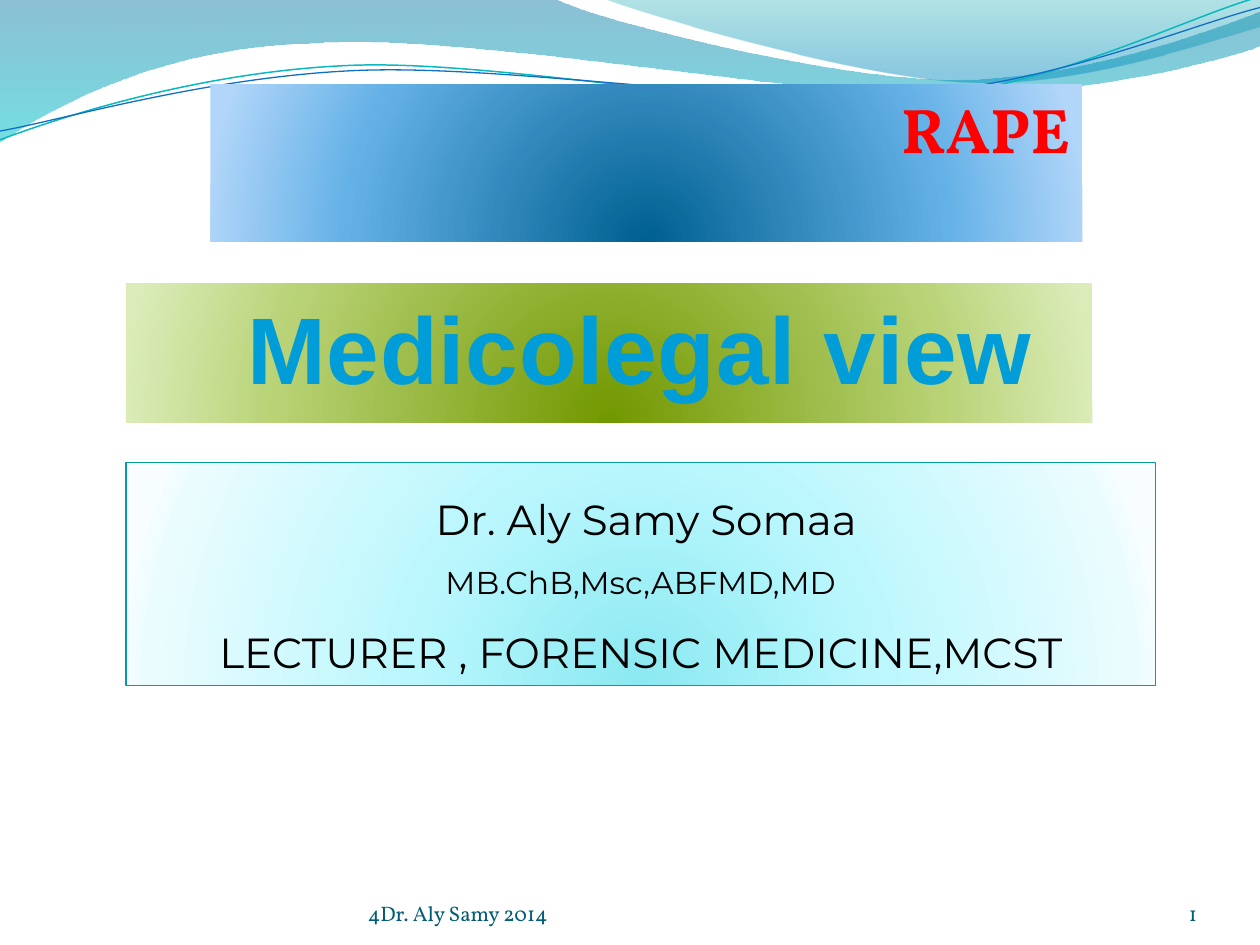
from lxml import etree
from pptx import Presentation
from pptx import util as u
from pptx.dml.color import RGBColor
from pptx.enum import shapes, text
from pptx.oxml import parse_xml
from pptx.oxml.ns import nsdecls, qn

BLACK = RGBColor(0x00, 0x00, 0x00)
RED = RGBColor(0xFF, 0x00, 0x00)
SKY = RGBColor(0x00, 0x9D, 0xD9)
PETROL = RGBColor(0x04, 0x5D, 0x75)
TEAL = RGBColor(0x0A, 0xB8, 0xBF)
BLUE = RGBColor(0x0F, 0x6F, 0xC6)
BORDER = RGBColor(0x06, 0x9C, 0xA3)

LEFT, CENTER, RIGHT = text.PP_ALIGN.LEFT, text.PP_ALIGN.CENTER, text.PP_ALIGN.RIGHT


def put_text(sp, lines, font, color, align=LEFT, bold=False, spacing=None,
             anchor=text.MSO_ANCHOR.TOP, margin=None, track=None):
    """Write (text, size) lines into a shape, one paragraph each."""
    tf = sp.text_frame
    tf.word_wrap = True
    tf.vertical_anchor = anchor
    if margin is not None:
        tf.margin_left = tf.margin_right = tf.margin_top = tf.margin_bottom = margin
    for i, (line, size) in enumerate(lines):
        p = tf.paragraphs[0] if i == 0 else tf.add_paragraph()
        p.alignment = align
        p.line_spacing = spacing
        r = p.add_run()
        r.text = line
        r.font.name, r.font.size, r.font.bold = font, u.Pt(size), bold
        r.font.color.rgb = color
        if track:
            r.font._element.set("spc", str(int(track * 100)))


def gradient(sp, stops, radial):
    """Fill with (position, colour, opacity) stops, from a low centre or downwards."""
    sp.fill.background()
    gs = "".join(
        f'<a:gs pos="{pos * 1000}"><a:srgbClr val="{color}">'
        f'<a:alpha val="{alpha * 1000}"/></a:srgbClr></a:gs>'
        for pos, color, alpha in stops)
    if radial:
        course = ('<a:path path="circle"><a:fillToRect l="50000" t="130000" '
                  'r="50000" b="-30000"/></a:path>')
    else:
        course = '<a:lin ang="5400000" scaled="0"/>'
    grad = parse_xml(f'<a:gradFill {nsdecls("a")} rotWithShape="1">'
                     f'<a:gsLst>{gs}</a:gsLst>{course}</a:gradFill>')
    spPr = sp._element.spPr
    spPr.replace(spPr.find(qn("a:noFill")), grad)


prs = Presentation()
prs.slide_width, prs.slide_height = u.Inches(10), u.Inches(7.5)
s = prs.slides.add_slide(prs.slide_layouts[6])

# Waves at the top: 2 numbers are a straight line's end, 6 are a Bezier curve
waves = [
    ([(0, 0), (4.4, -0.01), (4.76, 0.17, 6.64, 0.63, 7.58, 0.63),
      (8.53, 0.63, 9.58, 0.26, 10, 0.09), (10.01, 0.36),
      (9.83, 0.44, 8.7, 0.76, 7.46, 0.75), (6.22, 0.75, 3.82, 0.28, 2.57, 0.34),
      (1.29, 0.36, 0.46, 0.83, -0.01, 1.13), (0, 0)],
     [(0, "0074A1", 45), (100, "00C6CF", 55)], None, None),
    ([(4.79, -0.01), (5.09, 0.11, 6.82, 0.62, 7.69, 0.65),
      (8.56, 0.69, 9.61, 0.32, 10, 0.21), (10, 0), (4.79, -0.01)],
     [(0, "00A1A9", 30), (80, "008BBF", 45)], None, None),
    ([(0, 1.11), (0.48, 0.93, 1.58, 0.57, 2.77, 0.52),
      (3.95, 0.47, 5.93, 0.89, 7.13, 0.8), (8.33, 0.71, 9.38, 0.15, 9.98, -0.02)],
     None, TEAL, 0.85),
    ([(0, 1.04), (0.47, 0.96, 1.64, 0.61, 2.83, 0.56),
      (4.03, 0.51, 5.97, 0.84, 7.17, 0.75), (8.36, 0.67, 9.41, 0.21, 10, 0.06)],
     None, BLUE, 0.75),
]
for segments, stops, color, width in waves:
    pts = [(u.Inches(seg[i]), u.Inches(seg[i + 1]))
           for seg in segments for i in range(0, len(seg), 2)]
    fb = s.shapes.build_freeform(*pts[0])
    fb.add_line_segments(pts[1:], close=stops is not None)
    sp = fb.convert_to_shape()
    sp.shadow.inherit = False
    # Join each three points of a curve into one Bezier segment
    steps = iter(list(sp._element.iter(qn("a:lnTo"))))
    for seg in segments[1:]:
        group = [next(steps) for _ in range(len(seg) // 2)]
        if len(group) == 3:
            curve = etree.Element(qn("a:cubicBezTo"))
            group[0].addprevious(curve)
            for step in group:
                curve.append(step[0])
                step.getparent().remove(step)
    if stops:
        gradient(sp, stops, radial=False)
        sp.line.fill.background()
    else:
        sp.fill.background()
        sp.line.color.rgb, sp.line.width = color, u.Pt(width)

# Panels: green band, author box, title band
panels = []
for box, stops, line in [
    ((1, 2.25, 7.67, 1.1),
     [(0, "729800", 100), (68, "B8D275", 100), (100, "DBECB9", 100)], None),
    ((1, 3.67, 8.17, 1.77),
     [(0, "8BE9F1", 100), (43, "B9F7FD", 100), (93, "EAFCFE", 100),
      (100, "F8FEFF", 100)], BORDER),
    ((1.67, 0.67, 6.92, 1.25),
     [(0, "006091", 100), (68, "64B1E7", 100), (100, "B1D6F9", 100)], None),
]:
    sp = s.shapes.add_shape(shapes.MSO_SHAPE.RECTANGLE, *map(u.Inches, box))
    sp.shadow.inherit = False
    gradient(sp, stops, radial=True)
    if line:
        sp.line.color.rgb, sp.line.width = line, u.Pt(0.75)
    else:
        sp.line.fill.background()
    panels.append(sp)
band, author, title = panels

put_text(author, [(" Dr. Aly Samy Somaa", 24), ("MB.ChB,Msc,ABFMD,MD", 18),
                  ("LECTURER , FORENSIC MEDICINE,MCST", 24)],
         "Montserrat", BLACK, align=CENTER, spacing=1.5)
put_text(title, [("RAPE", 36)], "Vollkorn", RED, align=RIGHT, bold=True)

# Subtitle over the green band
sp = s.shapes.add_textbox(*map(u.Inches, (1.83, 2.25, 6.5, 1.01)))
put_text(sp, [("Medicolegal view", 54)], "Arial", SKY, align=CENTER, bold=True, track=0.5)

# Footer and page number
for left, width, label, align in [(2.92, 3.67, "4Dr. Aly Samy 2014", LEFT),
                                  (8.67, 0.83, "1", RIGHT)]:
    sp = s.shapes.add_textbox(*map(u.Inches, (left, 6.95, width, 0.4)))
    put_text(sp, [(label, 12)], "Vollkorn", PETROL, align=align,
             anchor=text.MSO_ANCHOR.BOTTOM, margin=0)

prs.save("out.pptx")
